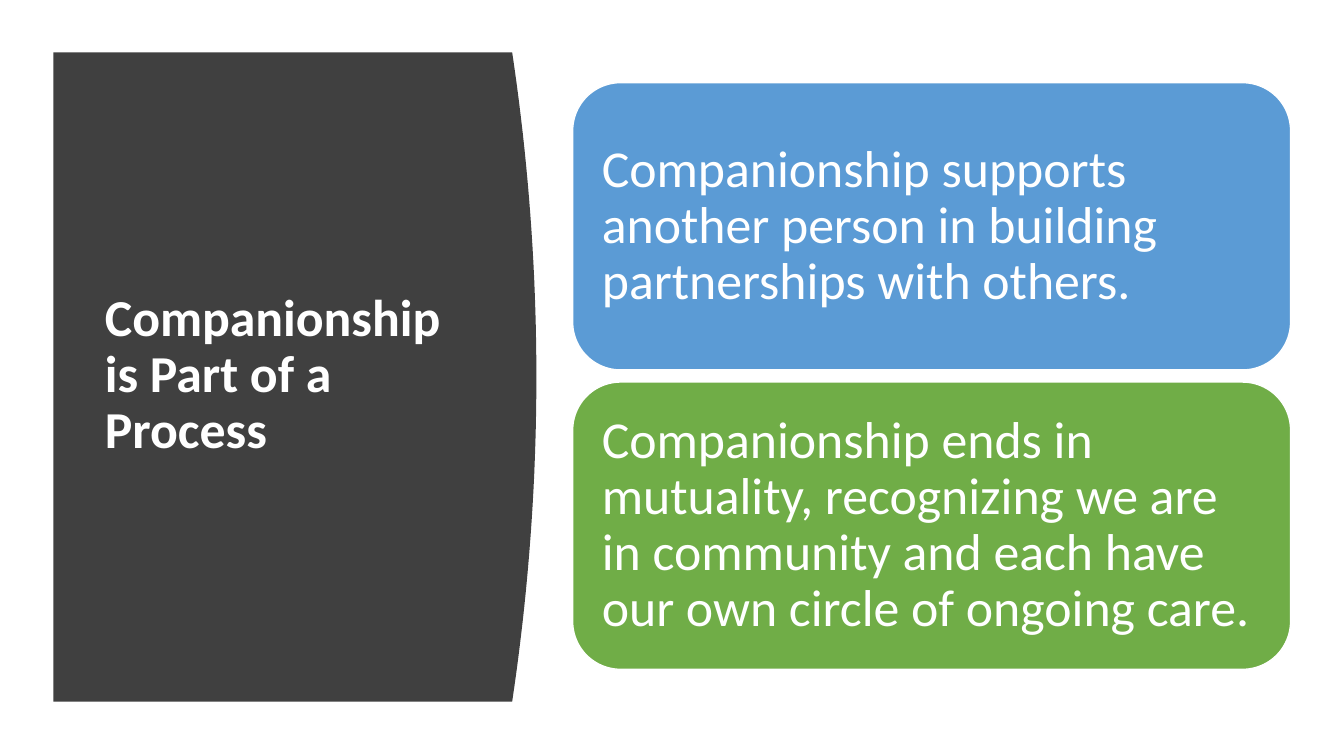
from pptx import Presentation
from pptx.dml.color import RGBColor
from pptx.enum.shapes import MSO_SHAPE as SHAPE
from pptx.enum.text import MSO_ANCHOR as ANCHOR, MSO_AUTO_SIZE as AUTO, PP_ALIGN as ALIGN
from pptx.util import Inches, Pt

WHITE = "FFFFFF"
CARDS = [
    ("Companionship supports another person in building partnerships with others.", "5B9BD5"),
    ("Companionship ends in mutuality, recognizing we are in community "
     "and each have our own circle of ongoing care.", "70AD47"),
]


def rgb(value):
    return RGBColor.from_string(value)


def set_fill(sp, color):
    sp.shadow.inherit = False
    sp.fill.solid()
    sp.fill.fore_color.rgb = rgb(color)


def set_text(sp, text, margin, bold=False):
    tf = sp.text_frame
    frame = {"word_wrap": True, "auto_size": AUTO.NONE, "vertical_anchor": ANCHOR.MIDDLE,
             "margin_left": margin, "margin_right": margin,
             "margin_top": margin, "margin_bottom": margin}
    for name, value in frame.items():
        setattr(tf, name, value)
    p = tf.paragraphs[0]
    p.alignment = ALIGN.LEFT
    p.line_spacing = 0.9
    r = p.add_run()
    r.text = text
    for name, value in {"name": "Calibri", "size": Pt(37), "bold": bold}.items():
        setattr(r.font, name, value)
    r.font.color.rgb = rgb(WHITE)


def add_panel(s, left, top, width, height, bulge, color, steps=40):
    points = []
    for i in range(steps + 1):
        t = i / steps
        x = left + width - bulge * (2 * t - 1) ** 2
        points.append((Inches(x), Inches(top + height * t)))
    points.append((Inches(left), Inches(top + height)))
    builder = s.shapes.build_freeform(Inches(left), Inches(top), scale=1.0)
    builder.add_line_segments(points, close=True)
    sp = builder.convert_to_shape()
    set_fill(sp, color)
    sp.line.fill.background()


def add_title(s, text, left, top, width, height):
    sp = s.shapes.title
    box = {"left": left, "top": top, "width": width, "height": height}
    for name, value in box.items():
        setattr(sp, name, Inches(value))
    set_text(sp, text, Inches(0.1), bold=True)
    s.shapes._spTree.append(sp._element)


def add_card(s, text, color, left, top, width, height):
    sp = s.shapes.add_shape(SHAPE.ROUNDED_RECTANGLE, Inches(left), Inches(top),
                            Inches(width), Inches(height))
    set_fill(sp, color)
    sp.line.color.rgb = rgb(WHITE)
    sp.line.width = Pt(1)
    set_text(sp, text, Inches(0.15))


def main():
    prs = Presentation()
    prs.slide_width, prs.slide_height = Inches(13.33), Inches(7.5)
    s = prs.slides.add_slide(prs.slide_layouts[5])
    add_panel(s, 0.53, 0.52, 4.79, 6.44, 0.24, "404040")
    add_title(s, "Companionship is Part of a Process", 0.94, 1.11, 3.74, 5.24)
    for i, (text, color) in enumerate(CARDS):
        add_card(s, text, color, 5.68, 0.82 + i * 2.97, 7.12, 2.85)
    prs.save("out.pptx")


if __name__ == "__main__":
    main()
